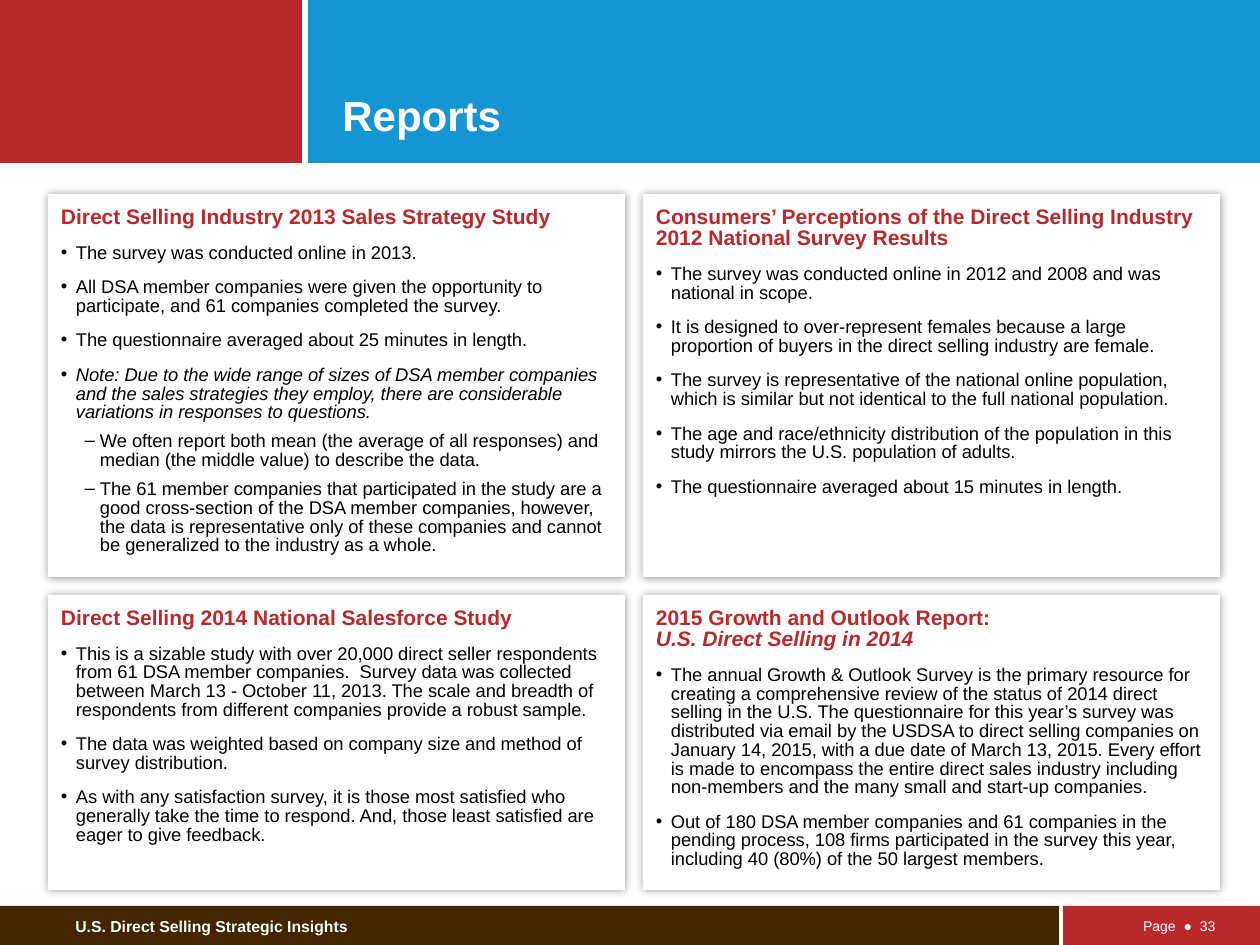
from dataclasses import dataclass

from lxml.etree import SubElement
from pptx import Presentation
from pptx.dml.color import RGBColor
from pptx.enum.shapes import MSO_SHAPE
from pptx.enum.text import MSO_ANCHOR, PP_ALIGN
from pptx.oxml.ns import qn
from pptx.util import Emu, Pt


@dataclass(frozen=True)
class Theme:
    font: str = "Arial"
    red: str = "B9282B"
    blue: str = "1595D4"
    brown: str = "432500"
    white: str = "FFFFFF"
    black: str = "000000"
    title: float = 24
    heading: float = 12
    body: float = 10.5
    footer: float = 9
    page: float = 8
    spacing: float = 0.85


BULLET = {"mark": "•", "margin": 15, "before": 9}
NOTE = {**BULLET, "italic": True}
DASH = {"mark": "–", "margin": 39, "before": 6, "level": 1}

COLUMNS = (48, 643)
ROWS = ((194, 383), (595, 295))
CARD_WIDTH = 577

CARDS = [
    ("Direct Selling Industry 2013 Sales Strategy Study", False, [
        (BULLET, "The survey was conducted online in 2013."),
        (BULLET, "All DSA member companies were given the opportunity to participate, "
                 "and 61 companies completed the survey."),
        (BULLET, "The questionnaire averaged about 25 minutes in length."),
        (NOTE, "Note: Due to the wide range of sizes of DSA member companies and the sales "
               "strategies they employ, there are considerable variations in responses to questions."),
        (DASH, "We often report both mean (the average of all responses) and median "
               "(the middle value) to describe the data."),
        (DASH, "The 61 member companies that participated in the study are a good cross-section "
               "of the DSA member companies, however, the data is representative only of these "
               "companies and cannot be generalized to the industry as a whole."),
    ]),
    ("Consumers’ Perceptions of the Direct Selling Industry\n2012 National Survey Results", False, [
        (BULLET, "The survey was conducted online in 2012 and 2008 and was national in scope."),
        (BULLET, "It is designed to over-represent females because a large proportion of buyers "
                 "in the direct selling industry are female."),
        (BULLET, "The survey is representative of the national online population, which is "
                 "similar but not identical to the full national population."),
        (BULLET, "The age and race/ethnicity distribution of the population in this study "
                 "mirrors the U.S. population of adults."),
        (BULLET, "The questionnaire averaged about 15 minutes in length."),
    ]),
    ("Direct Selling 2014 National Salesforce Study", False, [
        (BULLET, "This is a sizable study with over 20,000 direct seller respondents from 61 DSA "
                 "member companies.  Survey data was collected between March 13 - October 11, 2013. "
                 "The scale and breadth of respondents from different companies provide a robust sample."),
        (BULLET, "The data was weighted based on company size and method of survey distribution."),
        (BULLET, "As with any satisfaction survey, it is those most satisfied who generally take "
                 "the time to respond. And, those least satisfied are eager to give feedback."),
    ]),
    ("2015 Growth and Outlook Report:\nU.S. Direct Selling in 2014", True, [
        (BULLET, "The annual Growth & Outlook Survey is the primary resource for creating a "
                 "comprehensive review of the status of 2014 direct selling in the U.S. The "
                 "questionnaire for this year’s survey was distributed via email by the USDSA to "
                 "direct selling companies on January 14, 2015, with a due date of March 13, 2015. "
                 "Every effort is made to encompass the entire direct sales industry including "
                 "non-members and the many small and start-up companies."),
        (BULLET, "Out of 180 DSA member companies and 61 companies in the pending process, "
                 "108 firms participated in the survey this year, including 40 (80%) of the "
                 "50 largest members."),
    ]),
]


def px(n):
    return Emu(round(n * 914400 / 126))


class Deck:
    """Draws the elements of the current slide in one theme."""

    def __init__(self, prs, theme):
        self.theme = theme
        self.s = prs.slides.add_slide(prs.slide_layouts[6])

    def rect(self, box, color):
        sp = self.s.shapes.add_shape(MSO_SHAPE.RECTANGLE, *map(px, box))
        sp.fill.solid()
        sp.fill.fore_color.rgb = RGBColor.from_string(color)
        sp.line.fill.background()
        sp.shadow.inherit = False
        return sp

    def glow(self, sp):
        effects = sp._element.spPr.find(qn("a:effectLst"))
        shadow = SubElement(effects, qn("a:outerShdw"), blurRad=str(Pt(5)), dist="0",
                            dir="0", algn="ctr", rotWithShape="0")
        color = SubElement(shadow, qn("a:srgbClr"), val=self.theme.black)
        SubElement(color, qn("a:alpha"), val="40000")

    def style_text(self, p, text, size, color, bold=False, italic=False):
        p.text = text
        for r in p.runs:
            r.font.name = self.theme.font
            r.font.size = Pt(size)
            r.font.bold = bold
            r.font.italic = italic
            r.font.color.rgb = RGBColor.from_string(color)
        for br in p._p.findall(qn("a:br")):
            SubElement(br, qn("a:rPr"), sz=str(int(size * 100)))

    def label(self, box, text, size, bold=True, anchor=MSO_ANCHOR.MIDDLE, align=PP_ALIGN.LEFT):
        tf = self.s.shapes.add_textbox(*map(px, box)).text_frame
        tf.word_wrap = True
        tf.vertical_anchor = anchor
        p = tf.paragraphs[0]
        p.alignment = align
        p.line_spacing = self.theme.spacing if size == self.theme.title else 1.0
        self.style_text(p, text, size, self.theme.white, bold)

    def item(self, p, text, mark, margin, before, level=0, italic=False):
        p.level = level
        pPr = p._p.get_or_add_pPr()
        pPr.set("marL", str(px(margin)))
        pPr.set("indent", str(-px(15)))
        SubElement(pPr, qn("a:buFont"), typeface=self.theme.font)
        SubElement(pPr, qn("a:buChar"), char=mark)
        p.space_before = Pt(before)
        self.style_text(p, text, self.theme.body, self.theme.black, italic=italic)

    def card(self, box, heading, italic_end, items):
        sp = self.rect(box, self.theme.white)
        self.glow(sp)
        tf = sp.text_frame
        tf.word_wrap = True
        tf.vertical_anchor = MSO_ANCHOR.TOP
        tf.margin_left = tf.margin_right = tf.margin_top = tf.margin_bottom = px(13)
        p = tf.paragraphs[0]
        self.style_text(p, heading, self.theme.heading, self.theme.red, bold=True)
        p.runs[-1].font.italic = italic_end
        for style, text in items:
            self.item(tf.add_paragraph(), text, **style)
        for p in tf.paragraphs:
            p.alignment = PP_ALIGN.LEFT
            p.line_spacing = self.theme.spacing


def main():
    prs = Presentation()
    prs.slide_width, prs.slide_height = px(1260), px(945)
    theme = Theme()
    deck = Deck(prs, theme)

    deck.rect((0, 906, 1059, 39), theme.brown)
    deck.rect((308, 0, 952, 163), theme.blue)
    deck.rect((0, 0, 302, 163), theme.red)
    deck.rect((1063, 906, 197, 39), theme.red)
    deck.label((63, 911, 416, 31), "U.S. Direct Selling Strategic Insights", theme.footer)
    deck.label((330, 24, 898, 122), "Reports", theme.title, anchor=MSO_ANCHOR.BOTTOM)
    deck.label((1058, 911, 170, 30), "Page  ●  33", theme.page, bold=False, align=PP_ALIGN.RIGHT)

    spots = [(x, y, CARD_WIDTH, h) for y, h in ROWS for x in COLUMNS]
    for box, card in zip(spots, CARDS):
        deck.card(box, *card)

    prs.save("out.pptx")


if __name__ == "__main__":
    main()
